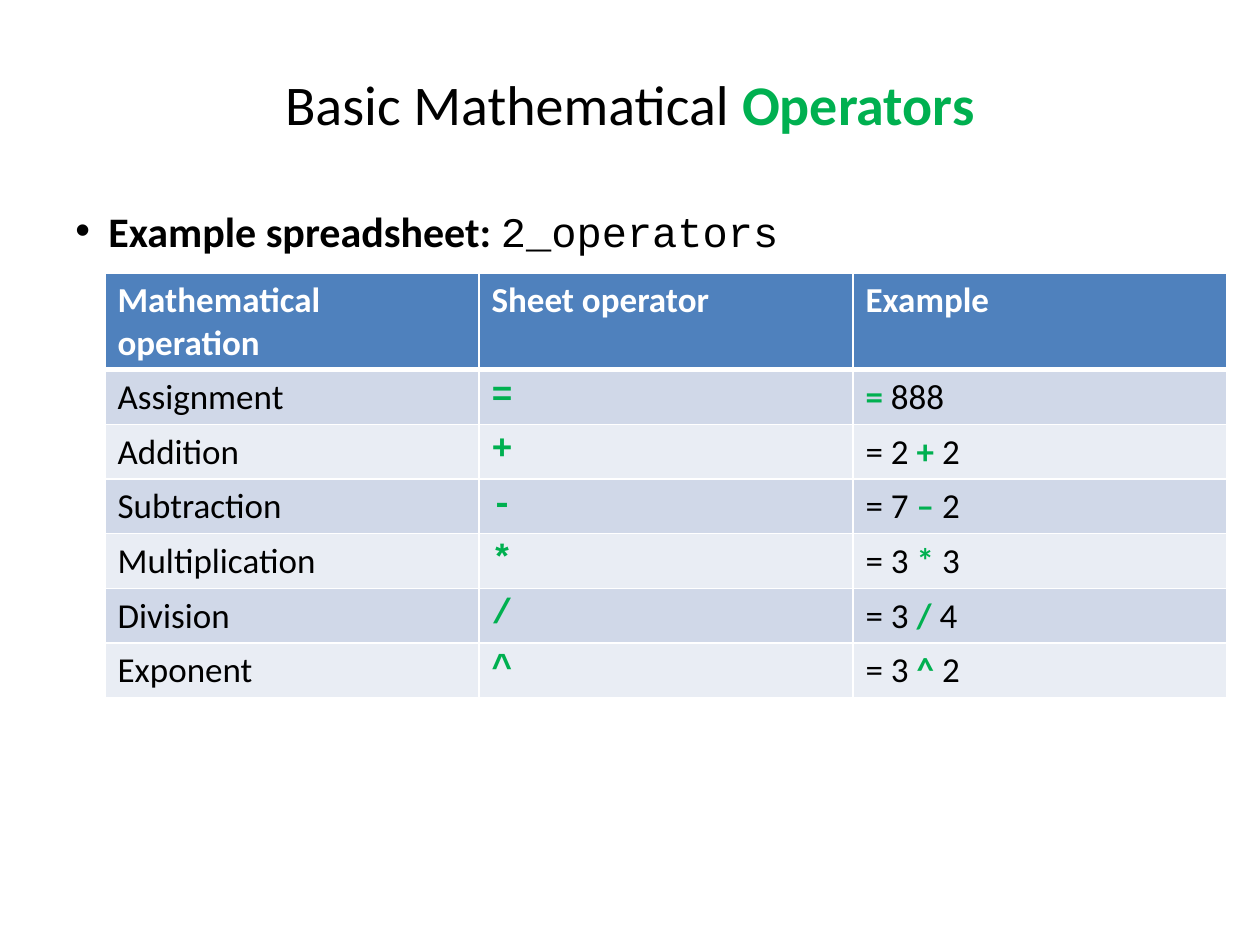
from lxml.etree import SubElement as Sub
from pptx import Presentation
from pptx.dml.color import RGBColor as RGB
from pptx.enum.text import MSO_ANCHOR as Anchor, PP_ALIGN as Align
from pptx.oxml.ns import qn
from pptx.util import Emu, Pt

BLACK, WHITE = RGB(0, 0, 0), RGB(255, 255, 255)
GREEN, BLUE = RGB(0, 176, 80), RGB(79, 129, 189)
BANDS = RGB(208, 216, 232), RGB(233, 237, 244)
SANS, MONO = "Calibri", "Courier New"

TITLE = "Basic Mathematical ", "Operators"
BULLET = "Example spreadsheet: ", "2_operators"
HEADS = "Mathematical operation", "Sheet operator", "Example"
ROWS = [
    ("Assignment", "=", ("", "= ", "888")),
    ("Addition", "+", ("= 2 ", "+ ", "2")),
    ("Subtraction", "-", ("= 7 ", "– ", "2")),
    ("Multiplication", "*", ("= 3 ", "*", " 3")),
    ("Division", "/", ("= 3 ", "/", " 4")),
    ("Exponent", "^", ("= 3 ", "^", " 2")),
]
COL, HEAD, ROW = 374, 92, 53


def px(n):
    """Turn pixels into EMU."""
    return Emu(n * 914400 // 126)


def write(para, text, size, color=BLACK, bold=False, face=SANS):
    """Add one styled run."""
    run = para.add_run()
    run.text = text
    font = run.font
    font.size, font.bold, font.name = Pt(size), bold, face
    font.color.rgb = color


def add_box(slide, x, y, w, h, anchor):
    """Add a wrapping text box and return its paragraph."""
    frame = slide.shapes.add_textbox(px(x), px(y), px(w), px(h)).text_frame
    frame.word_wrap = True
    frame.vertical_anchor = anchor
    return frame.paragraphs[0]


def paint(cell, fill, base):
    """Set the borders and fill of a cell."""
    props = cell._tc.get_or_add_tcPr()
    for side, width in zip("LRTB", (1, 1, 1, base)):
        line = Sub(props, qn(f"a:ln{side}"), w=str(Pt(width)))
        Sub(Sub(line, qn("a:solidFill")), qn("a:srgbClr"), val=str(WHITE))
    cell.fill.solid()
    cell.fill.fore_color.rgb = fill


def add_grid(slide):
    """Build the table of operators."""
    count = len(ROWS) + 1
    grid = slide.shapes.add_table(
        count, 3, px(105), px(273), px(3 * COL), px(HEAD + ROW * len(ROWS))
    ).table
    for col in grid.columns:
        col.width = px(COL)
    for i, row in enumerate(grid.rows):
        row.height = px(ROW if i else HEAD)
        for cell in row.cells:
            paint(cell, BANDS[(i - 1) % 2] if i else BLUE, 1 if i else 3)
    for j, head in enumerate(HEADS):
        write(grid.cell(0, j).text_frame.paragraphs[0], head, 20, WHITE, True)
    for i, (name, sign, parts) in enumerate(ROWS, 1):
        first, mid, last = (
            grid.cell(i, j).text_frame.paragraphs[0] for j in range(3)
        )
        write(first, name, 20)
        write(mid, sign, 20, GREEN, True, MONO)
        for k, part in enumerate(parts):
            if part:
                write(last, part, 20, GREEN if k == 1 else BLACK, k == 1)


def main():
    """Build and save the slide."""
    deck = Presentation()
    deck.slide_width, deck.slide_height = px(1260), px(945)
    slide = deck.slides.add_slide(deck.slide_layouts[6])

    title = add_box(slide, 63, 38, 1134, 130, Anchor.MIDDLE)
    title.alignment = Align.CENTER
    write(title, TITLE[0], 32)
    write(title, TITLE[1], 32, GREEN, True)

    item = add_box(slide, 63, 199, 1134, 693, Anchor.TOP)
    item.space_before = Pt(2)
    props = item._p.get_or_add_pPr()
    props.set("marL", str(px(33)))
    props.set("indent", str(-px(33)))
    Sub(props, qn("a:buFont"), typeface="Arial")
    Sub(props, qn("a:buChar"), char="•")
    write(item, BULLET[0], 24, bold=True)
    write(item, BULLET[1], 24, face=MONO)

    add_grid(slide)
    deck.save("out.pptx")


if __name__ == "__main__":
    main()
